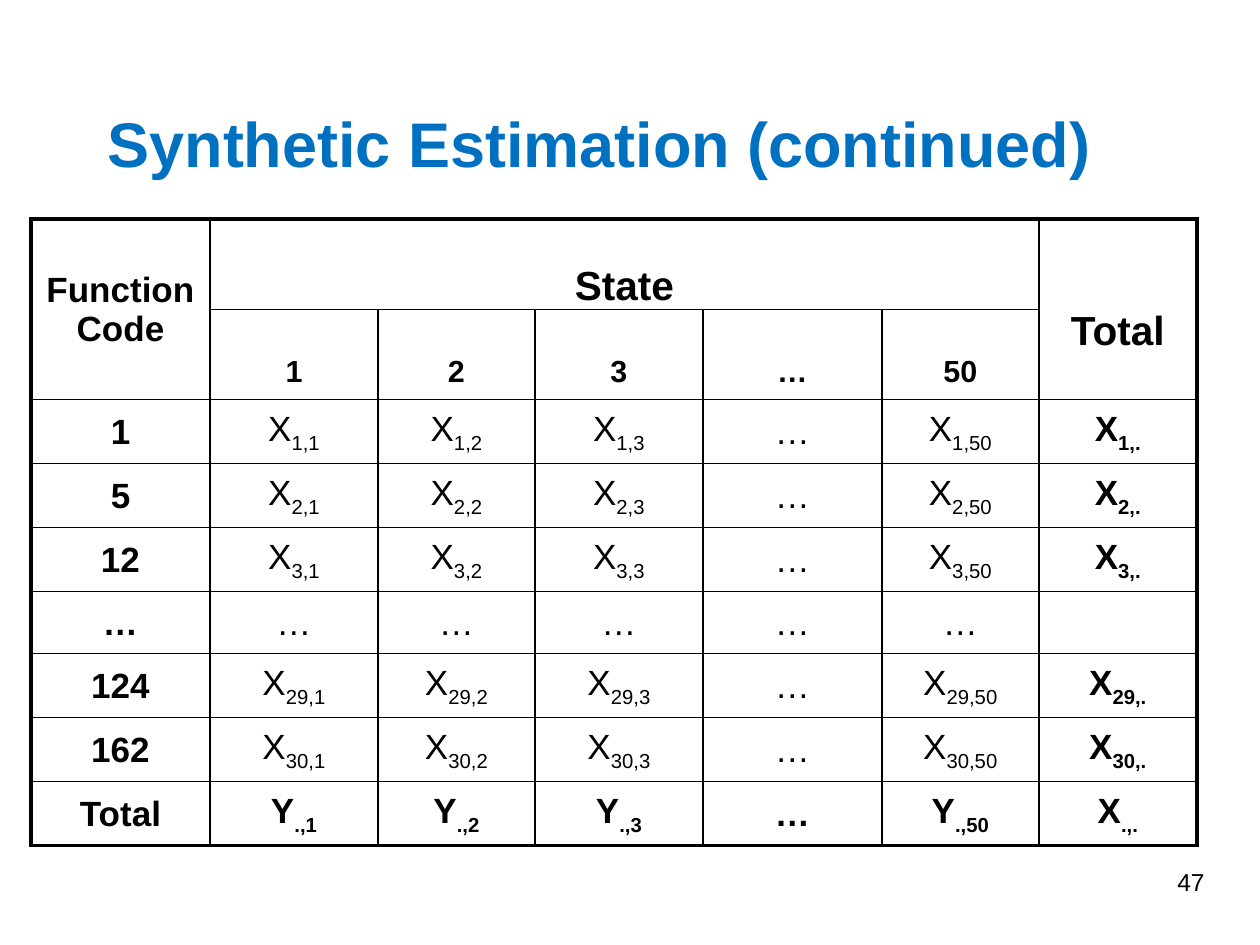
from dataclasses import dataclass

from lxml.etree import SubElement
from pptx import Presentation
from pptx.dml.color import RGBColor
from pptx.enum.text import MSO_ANCHOR as Anchor, PP_ALIGN as Align
from pptx.oxml.ns import qn
from pptx.util import Emu, Pt

FONT = "Arial"
BLACK = "000000"
BLUE = "0070C0"
COLS = [179, 168, 157, 168, 179, 157, 158]
ROWS = [87, 87, 64, 64, 64, 62, 64, 64, 64]
STATES = ["1", "2", "3", "…", "50"]
CODES = {"1": "1", "5": "2", "12": "3", "…": "", "124": "29", "162": "30"}


@dataclass
class Entry:
    row: int
    col: int
    text: str
    sub: str = ""
    bold: bool = True
    size: int = 20
    lowered: bool = False
    row_span: int = 1
    col_span: int = 1


def px(n: int) -> Emu:
    return Emu(n * 914400 // 126)


def rgb(value: str) -> RGBColor:
    return RGBColor.from_string(value)


def add_run(p, text: str, size: int, color: str = BLACK,
            bold: bool = False, lowered: bool = False) -> None:
    r = p.add_run()
    r.text = text
    r.font.name = FONT
    r.font.size = Pt(size)
    r.font.bold = bold
    r.font.color.rgb = rgb(color)
    if lowered:
        r.font._element.set("baseline", "-25000")


def add_border(cell, side: str, width: float) -> None:
    ln = SubElement(cell._tc.get_or_add_tcPr(), qn(f"a:ln{side}"), w=str(Pt(width)))
    fill = SubElement(ln, qn("a:solidFill"))
    SubElement(fill, qn("a:srgbClr"), val=BLACK)


def style_cell(table, row: int, col: int) -> None:
    cell = table.cell(row, col)
    outer = {"L": col == 0, "R": col == len(COLS) - 1,
             "T": row == 0, "B": row == len(ROWS) - 1}
    for side, on_edge in outer.items():
        add_border(cell, side, 2.25 if on_edge else 1)
    cell.fill.background()


def fill_cell(table, entry: Entry) -> None:
    cell = table.cell(entry.row, entry.col)
    if entry.row_span > 1 or entry.col_span > 1:
        cell.merge(table.cell(entry.row + entry.row_span - 1,
                              entry.col + entry.col_span - 1))
    cell.vertical_anchor = Anchor.MIDDLE
    cell.margin_left = cell.margin_right = cell.margin_top = px(1)
    cell.margin_bottom = 0
    p = cell.text_frame.paragraphs[0]
    p.alignment = Align.CENTER
    add_run(p, entry.text, entry.size, bold=entry.bold, lowered=entry.lowered)
    if entry.sub:
        add_run(p, entry.sub, entry.size, bold=entry.bold, lowered=True)


def indexed(row: int, col: int, letter: str, index: str, state: str, bold: bool) -> Entry:
    if "…" in (letter, state):
        return Entry(row, col, "…", bold=bold)
    return Entry(row, col, letter, f"{index},{state}", bold)


def table_entries() -> list[Entry]:
    last_row, last_col = len(ROWS) - 1, len(COLS) - 1
    entries = [
        Entry(0, 0, "Function Code", row_span=2),
        Entry(0, 1, "State", size=40, lowered=True, col_span=len(STATES)),
        Entry(0, last_col, "Total", size=40, lowered=True, row_span=2),
        Entry(last_row, 0, "Total"),
        Entry(last_row, last_col, "X", ".,."),
    ]
    for col, state in enumerate(STATES, 1):
        entries.append(Entry(1, col, state, size=30, lowered=True))
        entries.append(indexed(last_row, col, "Y", ".", state, True))
    for row, (code, index) in enumerate(CODES.items(), 2):
        entries.append(Entry(row, 0, code))
        letter = "X" if index else "…"
        for col, state in enumerate(STATES, 1):
            entries.append(indexed(row, col, letter, index, state, False))
        if index:
            entries.append(indexed(row, last_col, "X", index, ".", True))
    return entries


def add_title(s) -> None:
    sp = s.shapes.title
    sp.left, sp.top, sp.width, sp.height = px(95), px(84), px(1071), px(116)
    tf = sp.text_frame
    tf.word_wrap = True
    tf.vertical_anchor = Anchor.MIDDLE
    p = tf.paragraphs[0]
    p.alignment = Align.LEFT
    add_run(p, "Synthetic Estimation (continued)", 36, BLUE, bold=True)


def add_estimates(s) -> None:
    table = s.shapes.add_table(len(ROWS), len(COLS), px(31), px(219),
                               px(sum(COLS)), px(sum(ROWS))).table
    table.first_row = table.horz_banding = False
    for column, width in zip(table.columns, COLS):
        column.width = px(width)
    for row, height in zip(table.rows, ROWS):
        row.height = px(height)
    for row in range(len(ROWS)):
        for col in range(len(COLS)):
            style_cell(table, row, col)
    for entry in table_entries():
        fill_cell(table, entry)


def add_page_number(s) -> None:
    tf = s.shapes.add_textbox(px(955), px(861), px(262), px(63)).text_frame
    tf.word_wrap = True
    p = tf.paragraphs[0]
    p.alignment = Align.RIGHT
    add_run(p, "47", 14)


def main() -> None:
    prs = Presentation()
    prs.slide_width, prs.slide_height = px(1260), px(945)
    s = prs.slides.add_slide(prs.slide_layouts[5])
    add_title(s)
    add_estimates(s)
    add_page_number(s)
    prs.save("out.pptx")


if __name__ == "__main__":
    main()
